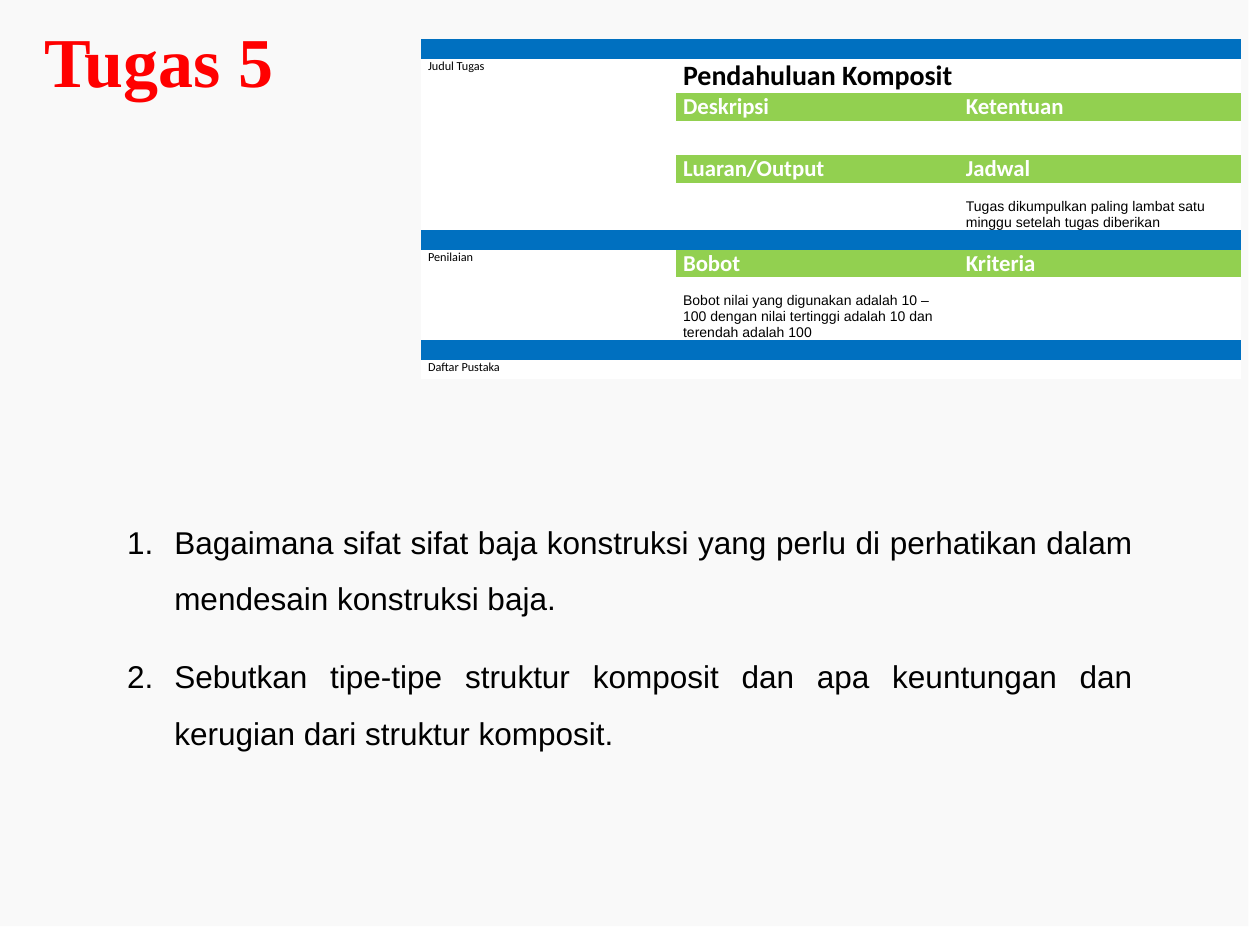
"""Build the "Tugas 5" assignment slide with its summary table and questions."""
from lxml import etree
from pptx import Presentation
from pptx.dml.color import RGBColor
from pptx.enum.shapes import MSO_SHAPE
from pptx.enum.text import MSO_ANCHOR, MSO_AUTO_SIZE, PP_ALIGN
from pptx.oxml.ns import qn
from pptx.util import Cm, Pt

RECTANGLE = MSO_SHAPE.RECTANGLE
TOP, MIDDLE, BOTTOM = MSO_ANCHOR.TOP, MSO_ANCHOR.MIDDLE, MSO_ANCHOR.BOTTOM
LEFT, JUSTIFY = PP_ALIGN.LEFT, PP_ALIGN.JUSTIFY
NO_AUTOFIT = MSO_AUTO_SIZE.NONE
NO_STYLE = "{2D5ABB26-0587-4C30-8999-92F81FD0307C}"
BLUE, GREEN, WHITE, BLACK, RED = "0070C0", "92D050", "FFFFFF", "000000", "FF0000"

TITLE = "Tugas 5"
QUESTIONS = [
    "Bagaimana sifat sifat baja konstruksi yang perlu di perhatikan dalam mendesain konstruksi baja.",
    "Sebutkan tipe-tipe struktur komposit dan apa keuntungan dan kerugian dari struktur komposit.",
]
COLUMN_WIDTHS = [5.14, 5.7, 5.7]
BAR = (0.39, "bar", ["", "", ""])
ROWS = [
    BAR,
    (0.69, "topic", ["Judul Tugas", "Pendahuluan Komposit", ""]),
    (0.56, "heading", ["", "Deskripsi", "Ketentuan"]),
    (0.7, "detail", ["", "", ""]),
    (0.56, "heading", ["", "Luaran/Output", "Jadwal"]),
    (0.95, "detail", ["", "", "Tugas dikumpulkan paling lambat satu minggu setelah tugas diberikan"]),
    BAR,
    (0.56, "heading", ["Penilaian", "Bobot", "Kriteria"]),
    (1.27, "detail", ["", "Bobot nilai yang digunakan adalah 10 – 100 dengan nilai tertinggi "
                          "adalah 10 dan terendah adalah 100", ""]),
    BAR,
    (0.39, "detail", ["Daftar Pustaka", "", ""]),
]
MERGES = [((0, 1), (0, 2)), ((1, 1), (1, 2)), ((2, 0), (3, 0)), ((9, 1), (9, 2)), ((10, 1), (10, 2))]
STYLES = {
    "bar": (BLUE, TOP, "Calibri", 7, WHITE, False),
    "label": (WHITE, TOP, "Calibri", 7, BLACK, False),
    "topic": (WHITE, TOP, "Calibri", 16, BLACK, True),
    "heading": (GREEN, MIDDLE, "Calibri", 13, WHITE, True),
    "detail": (WHITE, BOTTOM, "Arial", 8, BLACK, False),
}


def color(value):
    return RGBColor.from_string(value)


def add_run(paragraph, text, name, size, font_color, bold=False):
    run = paragraph.add_run()
    run.text = text
    run.font.name, run.font.size, run.font.bold = name, Pt(size), bold
    run.font.color.rgb = color(font_color)


def place(shape, left, top, width, height):
    shape.left, shape.top, shape.width, shape.height = Cm(left), Cm(top), Cm(width), Cm(height)
    frame = shape.text_frame
    frame.word_wrap, frame.auto_size, frame.vertical_anchor = True, NO_AUTOFIT, TOP
    return frame


def set_bullet(paragraph, kind, indent, **attributes):
    properties = paragraph._p.get_or_add_pPr()
    properties.set("marL", str(Cm(indent)))
    properties.set("indent", str(-Cm(indent)))
    etree.SubElement(properties, qn(kind), **attributes)


def add_backdrop(slide):
    backdrop = slide.shapes.add_shape(RECTANGLE, 0, 0, Cm(25.17), Cm(18.67))
    backdrop.shadow.inherit = False
    backdrop.line.fill.background()
    backdrop.fill.solid()
    backdrop.fill.fore_color.rgb = color("F2F2F2")
    tint = backdrop._element.spPr.find(".//" + qn("a:srgbClr"))
    etree.SubElement(tint, qn("a:alpha"), val="39000")
    slide.shapes._spTree.insert(2, backdrop._element)


def fill_cell(cell, text, style):
    fill, anchor, name, size, font_color, bold = STYLES[style]
    cell.fill.solid()
    cell.fill.fore_color.rgb = color(fill)
    cell.vertical_anchor = anchor
    cell.margin_left = cell.margin_right = Cm(0.15)
    cell.margin_top = cell.margin_bottom = 0
    paragraph = cell.text_frame.paragraphs[0]
    if text:
        add_run(paragraph, text, name, size, font_color, bold)
    else:
        etree.SubElement(paragraph._p, qn("a:endParaRPr"), sz="700")


def add_summary(slide):
    height = sum(row[0] for row in ROWS)
    frame = slide.shapes.add_table(len(ROWS), len(COLUMN_WIDTHS), Cm(8.48), Cm(0.79),
                                   Cm(sum(COLUMN_WIDTHS)), Cm(height))
    table = frame.table
    table.first_row = table.horz_banding = False
    table._tbl.tblPr.find(qn("a:tableStyleId")).text = NO_STYLE
    for column, width in zip(table.columns, COLUMN_WIDTHS):
        column.width = Cm(width)
    for row_index, (row_height, style, texts) in enumerate(ROWS):
        table.rows[row_index].height = Cm(row_height)
        for column_index, text in enumerate(texts):
            is_label = column_index == 0 and style != "bar"
            fill_cell(table.cell(row_index, column_index), text, "label" if is_label else style)
    for start, end in MERGES:
        table.cell(*start).merge(table.cell(*end))


def main():
    presentation = Presentation()
    presentation.slide_width, presentation.slide_height = Cm(25.4), Cm(19.05)
    slide = presentation.slides.add_slide(presentation.slide_layouts[1])
    title, body = slide.placeholders
    add_backdrop(slide)

    heading = place(title, 0.64, 0.41, 20.12, 2.11).paragraphs[0]
    heading.alignment, heading.line_spacing = LEFT, 0.9
    add_run(heading, TITLE, "Times New Roman", 40, RED, True)

    add_summary(slide)

    frame = place(body, 2.31, 10.03, 20.78, 5.16)
    for index, question in enumerate(QUESTIONS):
        paragraph = frame.paragraphs[0] if index == 0 else frame.add_paragraph()
        set_bullet(paragraph, "a:buAutoNum", 0.95, type="arabicPeriod")
        paragraph.alignment, paragraph.line_spacing = JUSTIFY, 1.5
        paragraph.space_before = Pt(12 if index else 0)
        add_run(paragraph, question, "Arial", 18, BLACK)

    presentation.save("out.pptx")


if __name__ == "__main__":
    main()
